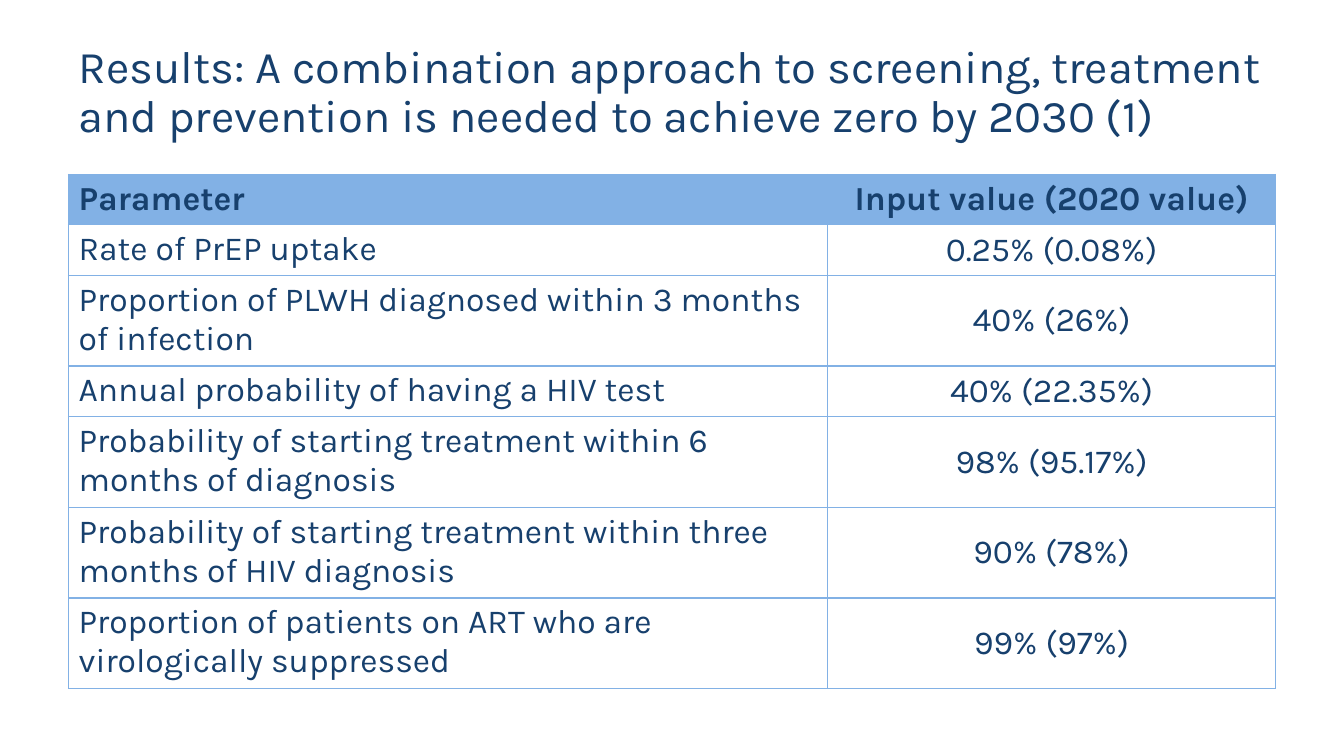
from lxml import etree
from pptx import Presentation
from pptx.dml.color import RGBColor
from pptx.enum.text import MSO_ANCHOR, PP_ALIGN
from pptx.oxml.ns import qn
from pptx.util import Inches, Pt

MIDDLE, TOP = MSO_ANCHOR.MIDDLE, MSO_ANCHOR.TOP
LEFT, CENTER = PP_ALIGN.LEFT, PP_ALIGN.CENTER
NAVY, BLUE = "17406D", "82B1E5"
FONT = "Karla"
TITLE = ("Results: A combination approach to screening, treatment "
         "and prevention is needed to achieve zero by 2030 (1)")
SHORT, TALL = 0.49, 0.88
ROWS = [
    (SHORT, "Parameter", "Input value (2020 value)"),
    (SHORT, "Rate of PrEP uptake", "0.25% (0.08%)"),
    (TALL, "Proportion of PLWH diagnosed within 3 months of infection", "40% (26%)"),
    (SHORT, "Annual probability of having a HIV test", "40% (22.35%)"),
    (TALL, "Probability of starting treatment within 6 months of diagnosis", "98% (95.17%)"),
    (TALL, "Probability of starting treatment within three months of HIV diagnosis", "90% (78%)"),
    (TALL, "Proportion of patients on ART who are virologically suppressed", "99% (97%)"),
]


def color(code):
    """Turn a hex string into a colour."""
    return RGBColor.from_string(code)


def write(frame, text, size, align=LEFT, bold=False):
    """Put one styled paragraph in a text frame."""
    para = frame.paragraphs[0]
    para.text = text
    para.alignment = align
    font = para.font
    font.name, font.size, font.bold = FONT, Pt(size), bold
    font.color.rgb = color(NAVY)
    return para


def border(cell, code, width):
    """Draw a solid line on all four sides of a cell."""
    props = cell._tc.get_or_add_tcPr()
    for spot, side in enumerate(("lnL", "lnR", "lnT", "lnB")):
        line = etree.Element(qn(f"a:{side}"), w=str(Pt(width)))
        fill = etree.SubElement(line, qn("a:solidFill"))
        etree.SubElement(fill, qn("a:srgbClr"), val=code)
        props.insert(spot, line)


def add_title(slide, left, top, width, height):
    """Place the heading in its box."""
    box = slide.shapes.add_textbox(*map(Inches, (left, top, width, height)))
    frame = box.text_frame
    frame.word_wrap = True
    frame.vertical_anchor = MIDDLE
    write(frame, TITLE, 32.4).line_spacing = 0.9


def add_grid(slide, left, top, width):
    """Place the table of parameters and their values."""
    height = sum(row[0] for row in ROWS)
    box = map(Inches, (left, top, width, height))
    table = slide.shapes.add_table(len(ROWS), 2, *box).table
    table.horz_banding = False
    first = 7.53
    table.columns[0].width = Inches(first)
    table.columns[1].width = Inches(width - first)
    for r, (tall, *texts) in enumerate(ROWS):
        head = r == 0
        table.rows[r].height = Inches(tall)
        for c, text in enumerate(texts):
            cell = table.cell(r, c)
            cell.vertical_anchor = MIDDLE if head or c else TOP
            if head:
                cell.fill.solid()
                cell.fill.fore_color.rgb = color(BLUE)
            else:
                cell.fill.background()
            border(cell, BLUE, 1)
            write(cell.text_frame, text, 24, CENTER if c else LEFT, head)


def main():
    """Build and save the slide."""
    deck = Presentation()
    deck.slide_width, deck.slide_height = Inches(13.33), Inches(7.5)
    slide = deck.slides.add_slide(deck.slide_layouts[6])
    left, width = 0.68, 11.97
    add_title(slide, left, 0.44, width, 0.98)
    add_grid(slide, left, 1.73, width)
    deck.save("out.pptx")


if __name__ == "__main__":
    main()
